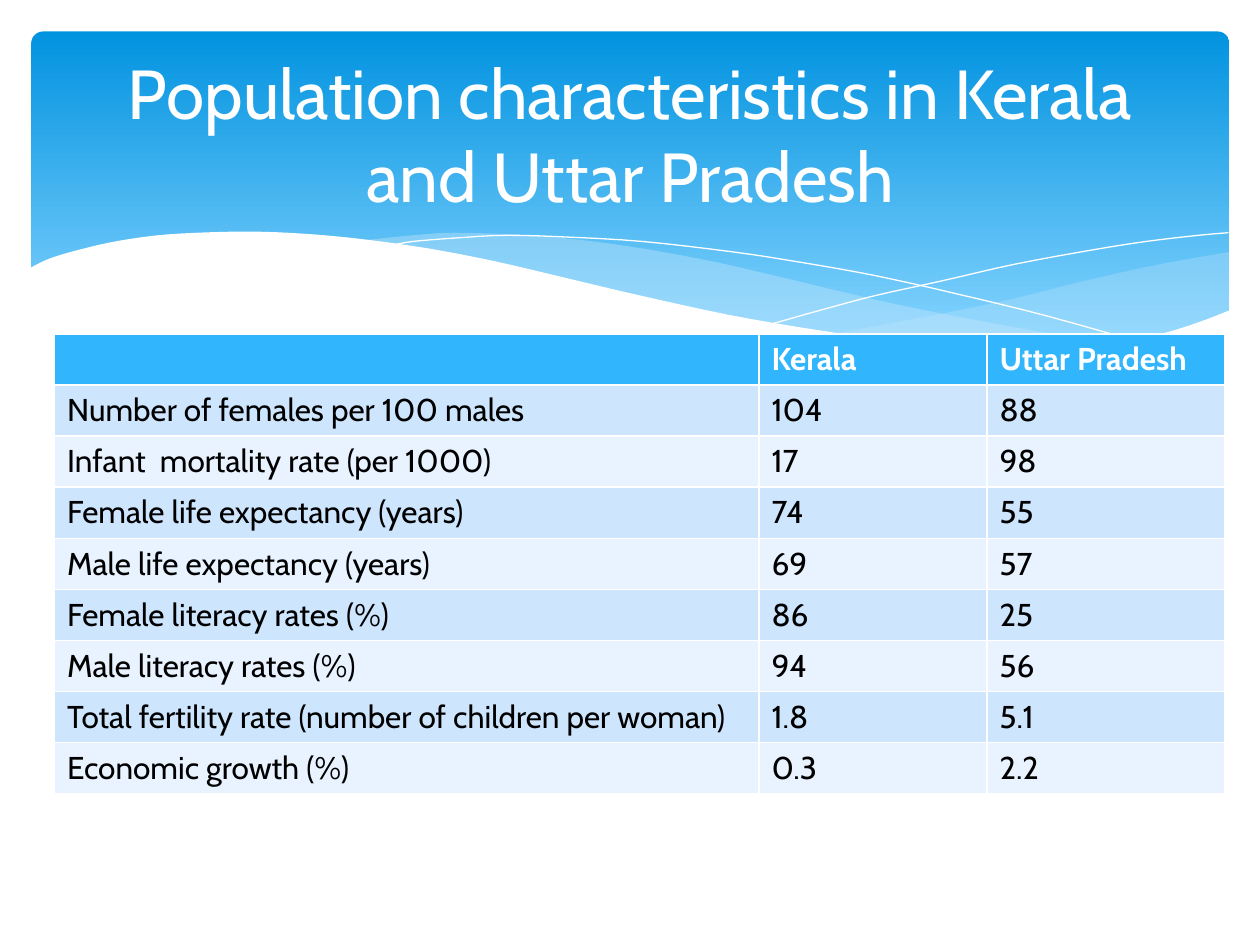
from lxml.etree import SubElement
from pptx import Presentation
from pptx.dml.color import RGBColor as RGB
from pptx.enum.shapes import MSO_SHAPE as SHAPE
from pptx.enum.text import MSO_ANCHOR as ANCHOR, MSO_AUTO_SIZE as FIT, PP_ALIGN as ALIGN
from pptx.oxml.ns import qn
from pptx.util import Pt

FONT = "Cabin"
COLORS = {
    "sky": "0293E0", "pale": "83D3FE", "veil": "C6E7FC", "white": "FFFFFF",
    "head": "31B6FD", "odd": "CEE5FE", "even": "E8F3FF", "text": "000000",
}
TITLE = "Population characteristics in Kerala and Uttar Pradesh"
ROWS = [
    ("", "Kerala", "Uttar Pradesh"),
    ("Number of females per 100 males", "104", "88"),
    ("Infant  mortality rate (per 1000)", "17", "98"),
    ("Female life expectancy (years)", "74", "55"),
    ("Male life expectancy (years)", "69", "57"),
    ("Female literacy rates (%)", "86", "25"),
    ("Male literacy rates (%)", "94", "56"),
    ("Total fertility rate (number of children per woman)", "1.8", "5.1"),
    ("Economic growth (%)", "0.3", "2.2"),
]
COLS = (402.5, 130.3, 136.1)
ROW_H = 29.2

# Each veil is a list of smooth edges that meet at corners, with its opacity.
VEILS = [
    ([[(702.5, 144), (663, 151), (620, 160.5), (580, 170.5), (542, 178.5),
       (508, 185), (476, 191)],
      [(476, 191), (508, 195), (536, 198), (578, 200), (615, 198.5),
       (646, 194.5), (673, 188.5), (702.5, 178)]], 29),
    ([[(643, 196.5), (603, 191), (558, 183), (508, 173), (453, 160),
       (410, 150), (370, 142.5), (335, 137.5), (302, 134.5), (260, 133),
       (236, 134.5), (206, 137.5)],
      [(206, 137.5), (246, 143.5), (291, 152), (323, 160), (382, 173),
       (433, 183.5), (479, 191.5), (520, 197), (557, 199.5), (589, 200),
       (617, 199.5), (643, 196.5)]], 40),
]
THREADS = [
    [(222.5, 140.5), (236, 138), (261, 136), (289, 134.5), (324, 135.5),
     (367, 138), (419, 144), (458, 150), (500, 157.5), (547, 168),
     (598, 180.5), (653, 196)],
    [(441.5, 185), (470, 177), (500, 169), (538.5, 160.5), (580, 151),
     (623.5, 143), (655, 138), (685, 134.5), (702, 133)],
]
WAVE = [
    (703.5, 177), (684, 184.5), (662.5, 191), (638.5, 195), (612, 198),
    (582.5, 199.5), (548, 198), (510, 194.5), (466.5, 188.5), (417, 180),
    (362, 168), (322, 158.5), (281.5, 149), (245, 142), (210, 137),
    (180, 134), (152, 132.5), (127.5, 132.5), (95, 134), (68.5, 137.5),
    (48, 142), (29, 147.5), (16.5, 153.5),
]
BASE = [(16.5, 237), (703.5, 237)]


def color(name):
    return RGB.from_string(COLORS[name])


def smooth(knots, steps=4):
    """Return points on a Catmull-Rom curve through the knots."""
    ends = [knots[0], *knots, knots[-1]]
    curve = [knots[0]]
    for quad in zip(ends, ends[1:], ends[2:], ends[3:]):
        for step in range(1, steps + 1):
            t = step / steps
            curve.append(tuple(
                (2 * b + (c - a) * t + (2 * a - 5 * b + 4 * c - d) * t ** 2
                 + (3 * b - a - 3 * c + d) * t ** 3) / 2
                for a, b, c, d in zip(*quad)))
    return curve


def draw(shapes, points, fill=None, alpha=None):
    """Draw a filled outline, or an open white hairline when fill is None."""
    spots = [(Pt(x), Pt(y)) for x, y in points]
    pen = shapes.build_freeform(*spots[0])
    pen.add_line_segments(spots[1:], close=fill is not None)
    shape = pen.convert_to_shape()
    shape.shadow.inherit = False
    if fill is None:
        shape.fill.background()
        shape.line.color.rgb = color("white")
        shape.line.width = Pt(0)
        return
    shape.line.fill.background()
    shape.fill.solid()
    shape.fill.fore_color.rgb = color(fill)
    if alpha:
        tint = shape._element.spPr.find(qn("a:solidFill"))[0]
        SubElement(tint, qn("a:alpha"), val=str(alpha * 1000))


def style(para, size, name, bold=False):
    for run in para.runs:
        font = run.font
        font.name, font.size, font.bold = FONT, Pt(size), bold
        font.color.rgb = color(name)


def add_banner(shapes):
    panel = shapes.add_shape(SHAPE.ROUNDED_RECTANGLE, Pt(18), Pt(18), Pt(684.5), Pt(194.5))
    panel.adjustments[0] = 0.034
    panel.shadow.inherit = False
    panel.line.fill.background()
    panel.fill.gradient()
    panel.fill.gradient_angle = 270
    for stop, name, spot in zip(panel.fill.gradient_stops, ("sky", "pale"), (0, 0.9)):
        stop.color.rgb, stop.position = color(name), spot
    for edges, alpha in VEILS:
        draw(shapes, [spot for edge in edges for spot in smooth(edge)], "veil", alpha)
    for thread in THREADS:
        draw(shapes, smooth(thread))
    draw(shapes, smooth(WAVE) + BASE, "white")


def set_title(shapes):
    title = shapes.title
    title.left, title.top, title.width, title.height = Pt(36), Pt(26.5), Pt(648), Pt(99)
    frame = title.text_frame
    frame.text = TITLE
    frame.word_wrap, frame.auto_size = True, FIT.NONE
    frame.vertical_anchor = ANCHOR.MIDDLE
    frame.paragraphs[0].alignment = ALIGN.CENTER
    style(frame.paragraphs[0], 39.6, "white")
    node = title._element
    node.getparent().append(node)  # bring in front of the banner


def add_grid(shapes):
    grid = shapes.add_table(len(ROWS), len(COLS), Pt(31.2), Pt(190.8),
                            Pt(sum(COLS)), Pt(ROW_H * len(ROWS))).table
    for col, width in zip(grid.columns, COLS):
        col.width = Pt(width)
    for i, (row, texts) in enumerate(zip(grid.rows, ROWS)):
        row.height = Pt(ROW_H)
        fill = "head" if i == 0 else "odd" if i % 2 else "even"
        for cell, text in zip(row.cells, texts):
            cell.fill.solid()
            cell.fill.fore_color.rgb = color(fill)
            cell.text_frame.text = text
            style(cell.text_frame.paragraphs[0], 18, "text" if i else "white", i == 0)


def main():
    deck = Presentation()
    deck.slide_width, deck.slide_height = Pt(720), Pt(540)
    shapes = deck.slides.add_slide(deck.slide_layouts[5]).shapes
    add_banner(shapes)
    set_title(shapes)
    add_grid(shapes)
    deck.save("out.pptx")


if __name__ == "__main__":
    main()
